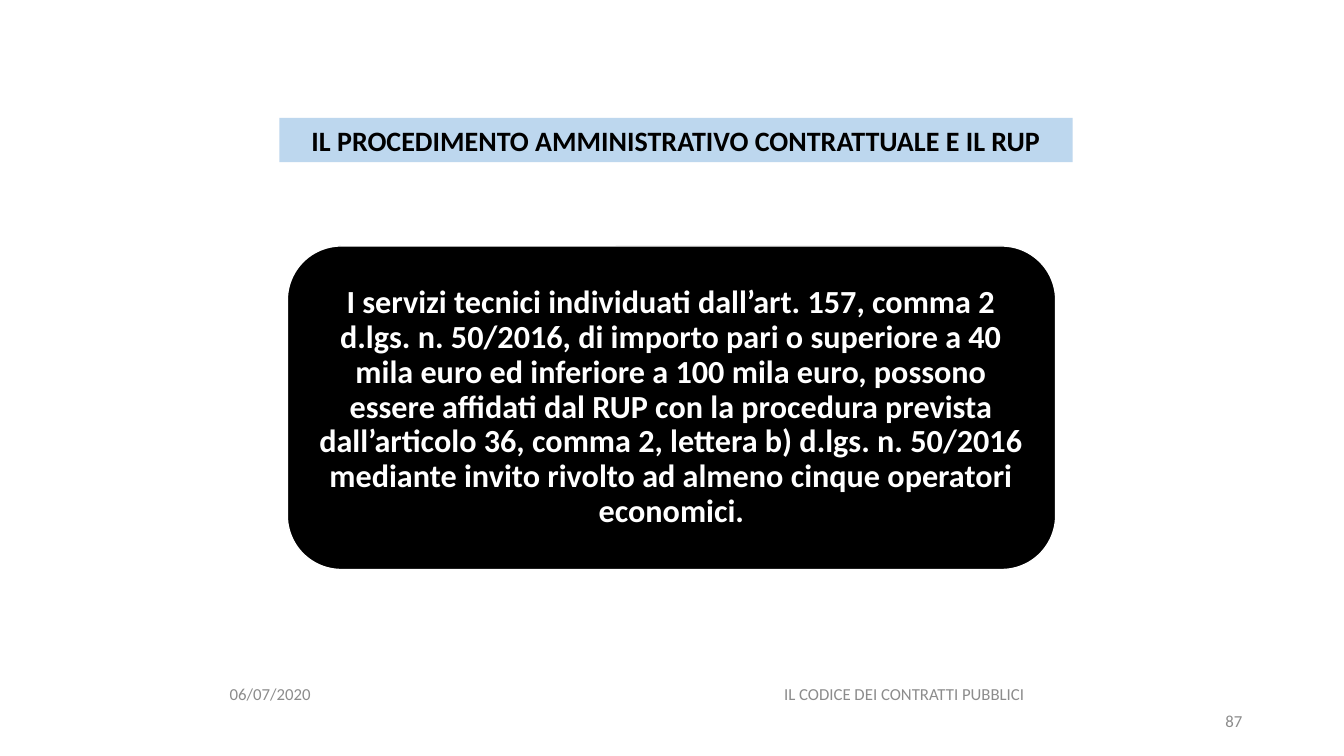
from dataclasses import dataclass
from typing import Optional

from pptx import Presentation
from pptx.dml.color import RGBColor
from pptx.enum.shapes import MSO_SHAPE
from pptx.enum.text import MSO_ANCHOR, PP_ALIGN
from pptx.util import Inches, Pt


@dataclass(frozen=True)
class Block:
    text: str
    left: float
    top: float
    width: float
    height: float
    size: int
    color: str
    align: PP_ALIGN = PP_ALIGN.CENTER
    bold: bool = False
    shape: Optional[MSO_SHAPE] = None
    fill: str = "FFFFFF"
    line: Optional[str] = None
    inset_x: float = 0.1
    inset_y: float = 0.05
    spacing: float = 1.0


GREY = "8C8C8C"
BODY = (
    "I servizi tecnici individuati dall’art. 157, comma 2 d.lgs. n. 50/2016, "
    "di importo pari o superiore a 40 mila euro ed inferiore a 100 mila euro, "
    "possono essere affidati dal RUP con la procedura prevista dall’articolo 36, "
    "comma 2, lettera b) d.lgs. n. 50/2016 mediante invito rivolto ad almeno "
    "cinque operatori economici."
)
BLOCKS = [
    Block("06/07/2020", 2.18, 6.68, 2.5, 0.4, 12, GREY, PP_ALIGN.LEFT),
    Block("IL CODICE DEI CONTRATTI PUBBLICI", 7.14, 6.68, 3.66, 0.4, 12, GREY),
    Block("87", 9.42, 6.95, 3, 0.4, 12, GREY, PP_ALIGN.RIGHT),
    Block("IL PROCEDIMENTO AMMINISTRATIVO CONTRATTUALE E IL RUP",
          2.77, 1.17, 7.87, 0.44, 20, "000000", bold=True,
          shape=MSO_SHAPE.RECTANGLE, fill="BDD7EE"),
    Block(BODY, 2.85, 2.44, 7.62, 3.21, 23, "FFFFFF", bold=True,
          shape=MSO_SHAPE.ROUNDED_RECTANGLE, fill="000000", line="FFFFFF",
          inset_y=0.1, spacing=0.9),
]


def rgb(value: str) -> RGBColor:
    return RGBColor.from_string(value)


def draw_block(slide, block: Block) -> None:
    box = [Inches(v) for v in (block.left, block.top, block.width, block.height)]
    if block.shape is None:
        sp = slide.shapes.add_textbox(*box)
    else:
        sp = slide.shapes.add_shape(block.shape, *box)
        sp.shadow.inherit = False
        sp.fill.solid()
        sp.fill.fore_color.rgb = rgb(block.fill)
        if block.line is None:
            sp.line.fill.background()
        else:
            sp.line.color.rgb = rgb(block.line)
            sp.line.width = Pt(1)

    tf = sp.text_frame
    tf.word_wrap = True
    tf.vertical_anchor = MSO_ANCHOR.MIDDLE
    tf.margin_left = tf.margin_right = Inches(block.inset_x)
    tf.margin_top = tf.margin_bottom = Inches(block.inset_y)

    p = tf.paragraphs[0]
    p.text = block.text
    p.alignment = block.align
    p.line_spacing = block.spacing
    p.font.name = "Calibri"
    p.font.size = Pt(block.size)
    p.font.bold = block.bold
    p.font.color.rgb = rgb(block.color)


def main() -> None:
    prs = Presentation()
    prs.slide_width = Inches(13.33)
    prs.slide_height = Inches(7.5)
    s = prs.slides.add_slide(prs.slide_layouts[6])
    for block in BLOCKS:
        draw_block(s, block)
    prs.save("out.pptx")


if __name__ == "__main__":
    main()
